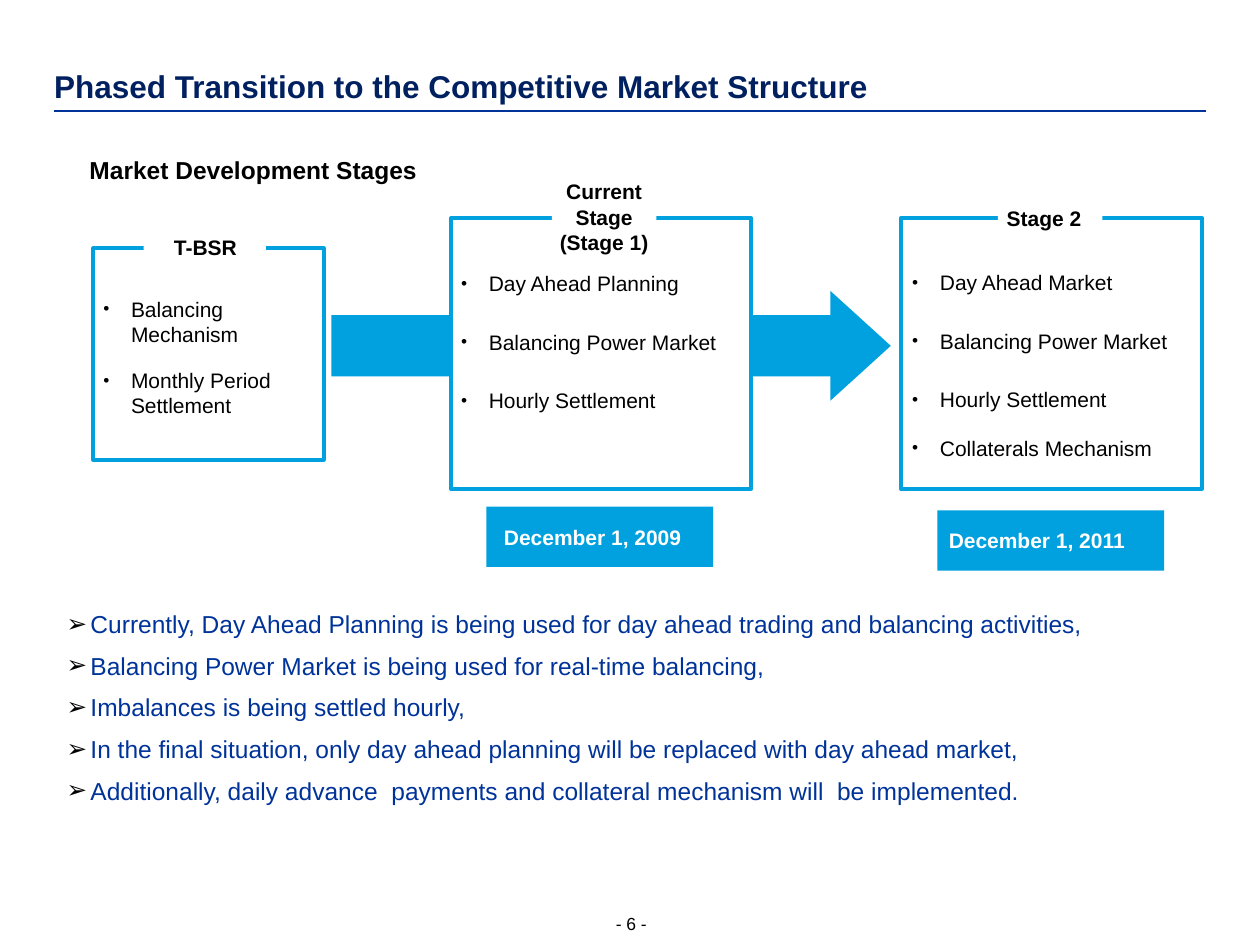
from lxml import etree
from pptx import Presentation
from pptx.dml.color import RGBColor
from pptx.enum.shapes import MSO_CONNECTOR, MSO_SHAPE
from pptx.enum.text import MSO_ANCHOR, PP_ALIGN
from pptx.oxml.ns import qn
from pptx.util import Inches, Pt

NAVY = RGBColor(0x00, 0x20, 0x60)
BLUE = RGBColor(0x00, 0x33, 0x99)
CYAN = RGBColor(0x00, 0xA1, 0xDE)
BLACK = RGBColor(0x00, 0x00, 0x00)
WHITE = RGBColor(0xFF, 0xFF, 0xFF)

prs = Presentation()
prs.slide_width, prs.slide_height = Inches(10), Inches(7.5)
slide = prs.slides.add_slide(prs.slide_layouts[6])


def add_block(shape_kind, box, fill, line=None):
    block = slide.shapes.add_shape(shape_kind, *map(Inches, box))
    block.shadow.inherit = False
    block.fill.solid()
    block.fill.fore_color.rgb = fill
    if line is None:
        block.line.fill.background()
    else:
        block.line.color.rgb = line
        block.line.width = Pt(2.25)
    return block


def write(lines, box=None, holder=None, size=12, color=BLACK, bold=False,
          align=PP_ALIGN.LEFT, anchor=MSO_ANCHOR.TOP, wrap=True,
          insets=(0, 0, 0, 0), spacing=None, before=None,
          bullet=None, bullet_scale=100, indent=0):
    """Write paragraphs into holder, or into a new text box at box."""
    holder = holder or slide.shapes.add_textbox(*map(Inches, box))
    frame = holder.text_frame
    frame.word_wrap = wrap
    frame.vertical_anchor = anchor
    (frame.margin_left, frame.margin_top,
     frame.margin_right, frame.margin_bottom) = map(Inches, insets)
    for i, line in enumerate(lines):
        para = frame.paragraphs[0] if i == 0 else frame.add_paragraph()
        para.alignment = align
        if spacing:
            para.line_spacing = spacing
        if before:
            para.space_before = Pt(before[i])
        run = para.add_run()
        run.text = line
        run.font.name, run.font.size, run.font.bold = "Arial", Pt(size), bold
        run.font.color.rgb = color
        if bullet:
            props = para._p.get_or_add_pPr()
            props.set("marL", str(Inches(indent)))
            props.set("indent", str(-Inches(indent)))
            bullet_color = etree.SubElement(props, qn("a:buClr"))
            etree.SubElement(bullet_color, qn("a:srgbClr"), val=str(BLACK))
            etree.SubElement(props, qn("a:buSzPct"), val=str(bullet_scale * 1000))
            etree.SubElement(props, qn("a:buFont"), typeface="Arial")
            etree.SubElement(props, qn("a:buChar"), char=bullet)


# Title, rule, subtitle and page number
title_rule = slide.shapes.add_connector(
    MSO_CONNECTOR.STRAIGHT, Inches(0.43), Inches(0.88), Inches(9.57), Inches(0.88))
title_rule.line.color.rgb = BLUE
title_rule.line.width = Pt(1.5)
etree.SubElement(title_rule._element.spPr, qn("a:effectLst"))
write(["Phased Transition to the Competitive Market Structure"],
      (0.43, 0.53, 9.15, 0.3), size=18, color=NAVY, bold=True,
      anchor=MSO_ANCHOR.BOTTOM, spacing=1.06)
write(["Market Development Stages"], (0.71, 1.23, 2.61, 0.24),
      size=14, bold=True, wrap=False)
write(["- 6 -"], (4.84, 7.25, 0.34, 0.17), size=10,
      align=PP_ALIGN.CENTER, wrap=False)

# Arrow that runs behind the current stage
transition = add_block(MSO_SHAPE.RIGHT_ARROW, (2.63, 2.31, 4.44, 0.87), CYAN)
transition.adjustments[0] = 0.56
transition.adjustments[1] = 0.55

# Stages: frame, label lines, label box, label inset, label alignment,
# items, items box, space before each item
stages = [
    ((0.74, 1.97, 1.83, 1.68), ["T-BSR"], (1.14, 1.86, 0.97, 0.22), 0.24, PP_ALIGN.LEFT,
     ["Balancing Mechanism", "Monthly Period Settlement"],
     (0.82, 2.35, 1.56, 0.95), (0, 12)),
    ((3.58, 1.73, 2.38, 2.15), ["Current", "Stage", "(Stage 1)"],
     (4.38, 1.42, 0.83, 0.61), 0, PP_ALIGN.CENTER,
     ["Day Ahead Planning", "Balancing Power Market", "Hourly Settlement"],
     (3.66, 2.15, 2.2, 1.1), (0, 19, 19)),
    ((7.15, 1.73, 2.39, 2.15), ["Stage 2"], (7.92, 1.63, 0.83, 0.2), 0.07, PP_ALIGN.LEFT,
     ["Day Ahead Market", "Balancing Power Market", "Hourly Settlement",
      "Collaterals Mechanism"],
     (7.24, 2.14, 2.2, 1.49), (0, 19, 19, 13.5)),
]
for frame_box, label, label_box, inset, label_align, items, items_box, gaps in stages:
    add_block(MSO_SHAPE.RECTANGLE, frame_box, WHITE, line=CYAN)
    label_patch = add_block(MSO_SHAPE.RECTANGLE, label_box, WHITE)
    write(label, holder=label_patch, bold=True, align=label_align,
          insets=(inset, 0, 0, 0))
    write(items, items_box, before=gaps, bullet="•", bullet_scale=83, indent=0.22)

# Start dates under the stages
for date, date_box, inset in [
    ("December 1, 2009", (3.86, 4.02, 1.8, 0.48), 0.14),
    ("December 1, 2011", (7.44, 4.05, 1.8, 0.48), 0.09),
]:
    date_block = add_block(MSO_SHAPE.RECTANGLE, date_box, CYAN)
    write([date], holder=date_block, color=WHITE, bold=True,
          anchor=MSO_ANCHOR.MIDDLE, insets=(inset, 0, 0, 0))

# Explanatory notes
notes = [
    "Currently, Day Ahead Planning is being used for day ahead trading and balancing activities,",
    "Balancing Power Market is being used for real-time balancing,",
    "Imbalances is being settled hourly,",
    "In the final situation, only day ahead planning will be replaced with day ahead market,",
    "Additionally, daily advance  payments and collateral mechanism will  be implemented.",
]
write(notes, (0.43, 4.77, 9.13, 1.89), size=14, color=BLUE,
      insets=(0.1, 0.05, 0.1, 0.05), spacing=1.06, before=[6] * len(notes),
      bullet="➢", indent=0.19)

prs.save("out.pptx")
